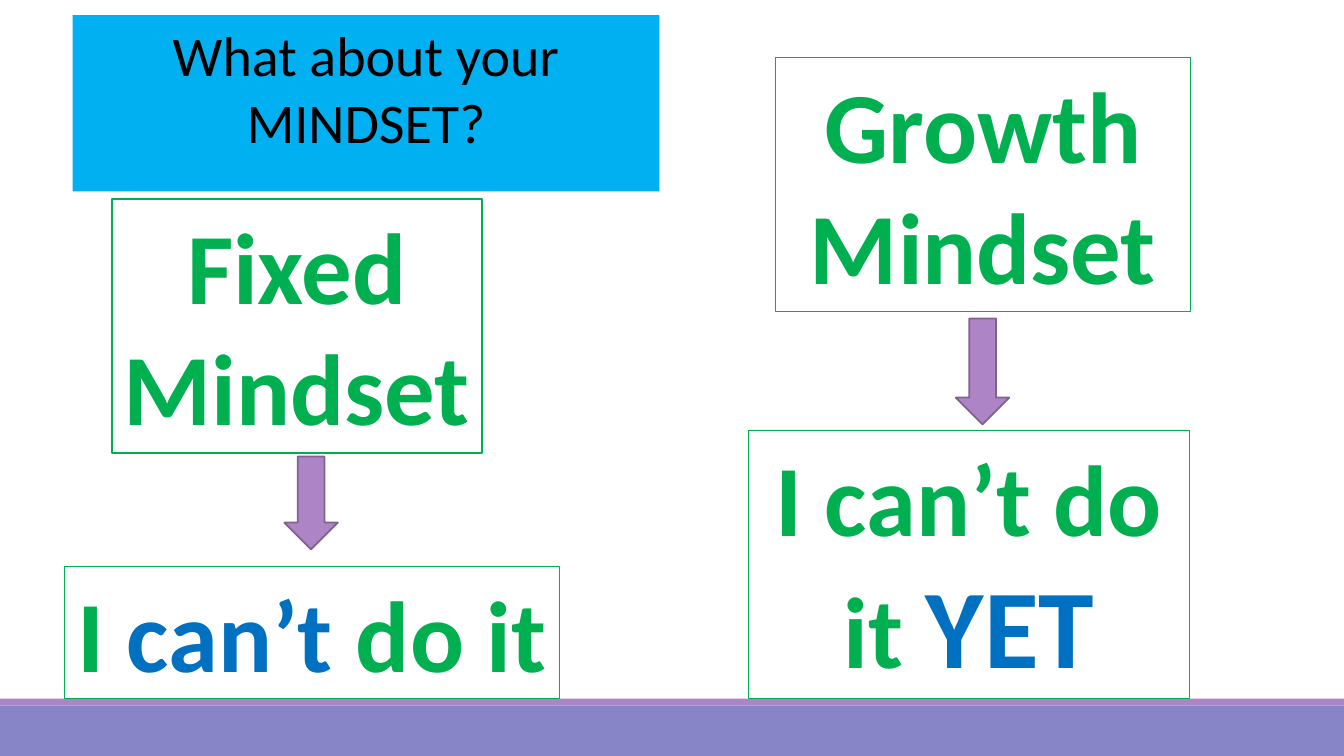
from dataclasses import dataclass
from typing import Optional

from pptx import Presentation
from pptx.dml.color import RGBColor
from pptx.enum.shapes import MSO_SHAPE
from pptx.enum.text import MSO_ANCHOR, MSO_AUTO_SIZE, PP_ALIGN
from pptx.util import Inches, Pt

SLIDE_WIDTH = Inches(13.33)
SLIDE_HEIGHT = Inches(7.5)
COLUMNS = ROWS = 100

COLORS = {
    "green": "00B050",
    "blue": "0070C0",
    "sky": "00B0F0",
    "black": "000000",
    "purple": "AD84C6",
    "plum": "806292",
    "lavender": "8784C7",
}


@dataclass(frozen=True)
class Area:
    """Position and size in grid columns and rows."""
    column: float
    row: float
    columns: float
    rows: float


@dataclass(frozen=True)
class Piece:
    text: str
    color: str = "green"
    size: float = 72
    bold: bool = True


@dataclass(frozen=True)
class Block:
    area: Area
    kind: MSO_SHAPE = MSO_SHAPE.RECTANGLE
    fill: Optional[str] = None
    line: Optional[str] = None
    line_width: float = 1
    paragraphs: tuple[tuple[Piece, ...], ...] = ()
    wrap: bool = True


def arrow(area: Area) -> Block:
    return Block(area, MSO_SHAPE.DOWN_ARROW, "purple", "plum", 1.25)


BLOCKS = (
    # Footer bands
    Block(Area(0, 93.33, 100, 6.67), fill="lavender"),
    Block(Area(0, 92.4, 100, 0.93), fill="purple"),
    # Fixed mindset
    Block(Area(8.33, 26.27, 27.53, 33.6), line="green", line_width=1.5, wrap=False,
          paragraphs=((Piece("Fixed"),), (Piece("Mindset"),))),
    arrow(Area(21.16, 60.4, 3.98, 12.27)),
    Block(Area(4.8, 74.93, 36.83, 17.47), line="green", wrap=False,
          paragraphs=((Piece("I "), Piece("can’t", color="blue"), Piece(" do it")),)),
    # Growth mindset
    Block(Area(57.69, 7.6, 30.91, 33.6), line="green",
          paragraphs=((Piece("Growth"),), (Piece("Mindset"),))),
    arrow(Area(71.12, 42.13, 3.98, 14)),
    Block(Area(55.66, 56.93, 32.86, 35.47), line="green", line_width=0.75,
          paragraphs=((Piece("I can’t do it "), Piece("YET", color="blue", size=80)),)),
    # Title
    Block(Area(5.4, 2, 43.66, 23.33), fill="sky",
          paragraphs=((Piece("What about your MINDSET?", "black", 40, False),),)),
)


def rgb(name: str) -> RGBColor:
    return RGBColor.from_string(COLORS[name])


def add_text(paragraph, text: str, *, color: str, size: float, bold: bool) -> None:
    run = paragraph.add_run()
    run.text = text
    run.font.name = "Calibri"
    run.font.size = Pt(size)
    run.font.bold = bold
    run.font.color.rgb = rgb(color)


def write_paragraphs(shape, block: Block) -> None:
    frame = shape.text_frame
    frame.word_wrap = block.wrap
    frame.auto_size = MSO_AUTO_SIZE.NONE
    frame.vertical_anchor = MSO_ANCHOR.TOP
    for index, pieces in enumerate(block.paragraphs):
        paragraph = frame.add_paragraph() if index else frame.paragraphs[0]
        paragraph.alignment = PP_ALIGN.CENTER
        for piece in pieces:
            add_text(paragraph, piece.text, color=piece.color,
                     size=piece.size, bold=piece.bold)


def draw_block(slide, block: Block) -> None:
    area = block.area
    shape = slide.shapes.add_shape(
        block.kind,
        round(SLIDE_WIDTH * area.column / COLUMNS),
        round(SLIDE_HEIGHT * area.row / ROWS),
        round(SLIDE_WIDTH * area.columns / COLUMNS),
        round(SLIDE_HEIGHT * area.rows / ROWS),
    )
    shape.shadow.inherit = False
    if block.fill:
        shape.fill.solid()
        shape.fill.fore_color.rgb = rgb(block.fill)
    else:
        shape.fill.background()
    if block.line:
        shape.line.color.rgb = rgb(block.line)
        shape.line.width = Pt(block.line_width)
    else:
        shape.line.fill.background()
    if block.paragraphs:
        write_paragraphs(shape, block)


def main() -> None:
    presentation = Presentation()
    presentation.slide_width = SLIDE_WIDTH
    presentation.slide_height = SLIDE_HEIGHT
    slide = presentation.slides.add_slide(presentation.slide_layouts[6])
    for block in BLOCKS:
        draw_block(slide, block)
    presentation.save("out.pptx")


if __name__ == "__main__":
    main()
